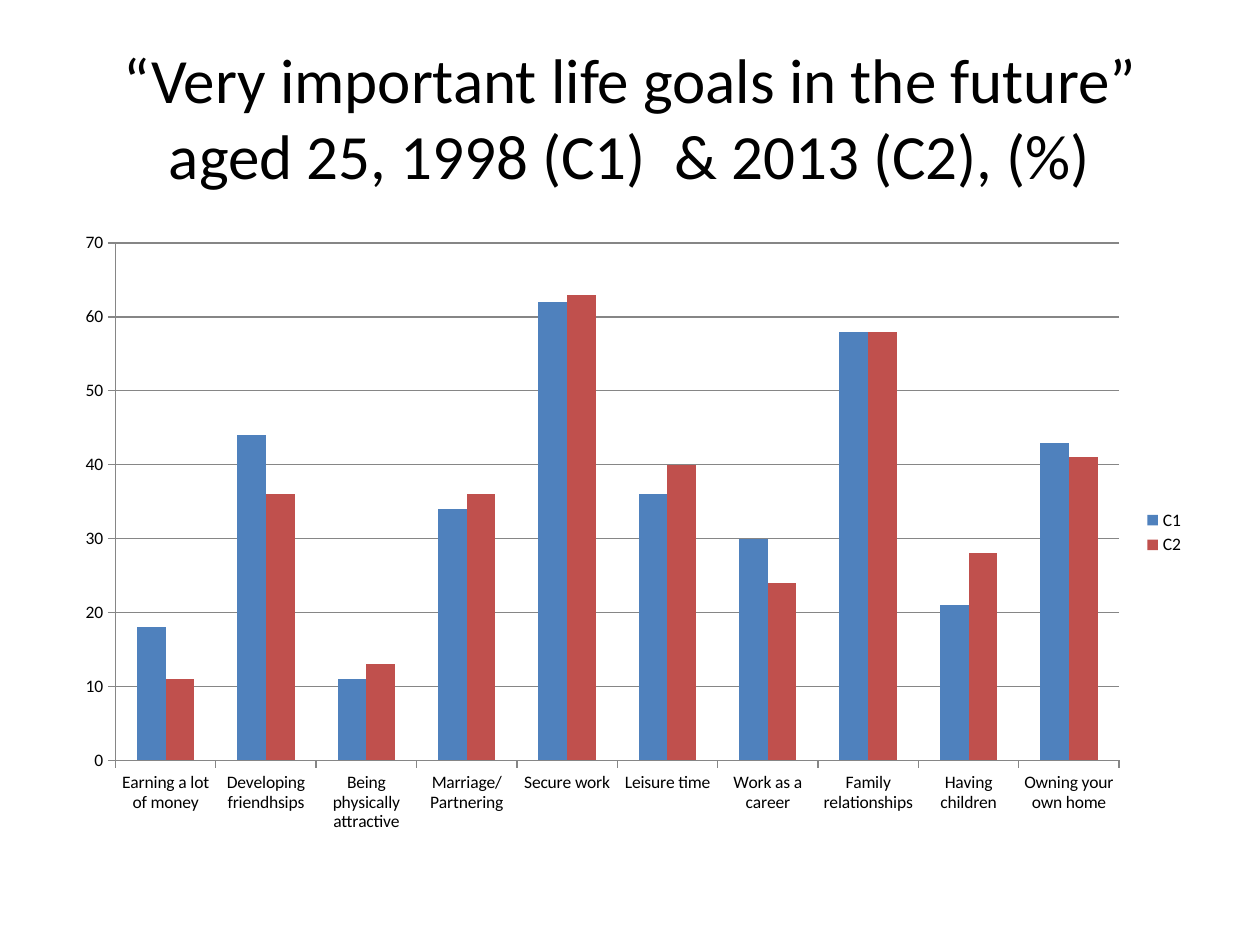
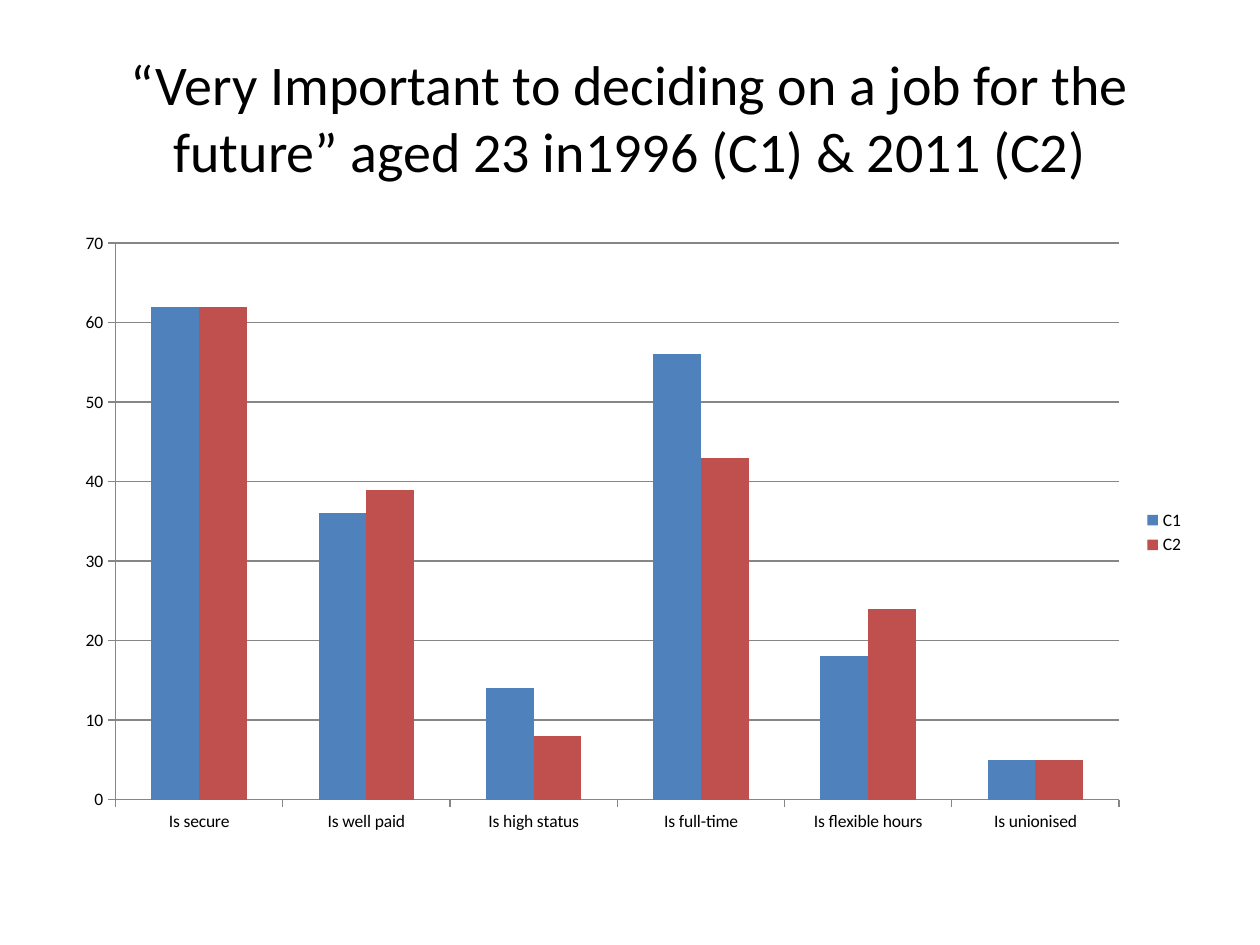
"""Build two slides that compare the goals of two cohorts in column charts."""
from pptx import Presentation
from pptx.chart.data import CategoryChartData as Data
from pptx.dml.color import RGBColor
from pptx.enum.chart import XL_CHART_TYPE as Kind, XL_LEGEND_POSITION as Side, XL_TICK_MARK as Tick
from pptx.enum.text import MSO_ANCHOR as Anchor, MSO_AUTO_SIZE as Fit, PP_ALIGN as Align
from pptx.util import Cm, Pt

BLACK = RGBColor(0x00, 0x00, 0x00)
GREY = RGBColor(0x86, 0x86, 0x86)
BLUE = RGBColor(0x4F, 0x81, 0xBD)
RED = RGBColor(0xC0, 0x50, 0x4D)
WHITE = RGBColor(0xFF, 0xFF, 0xFF)

GOALS = [
    ("Earning a lot of money", 18, 11),
    ("Developing friendhsips", 44, 36),
    ("Being physically attractive", 11, 13),
    ("Marriage/Partnering", 34, 36),
    ("Secure work", 62, 63),
    ("Leisure time", 36, 40),
    ("Work as a career", 30, 24),
    ("Family relationships", 58, 58),
    ("Having children", 21, 28),
    ("Owning your own home", 43, 41),
]
JOBS = [
    ("Is secure", 62, 62),
    ("Is well paid", 36, 39),
    ("Is high status", 14, 8),
    ("Is full-time", 56, 43),
    ("Is flexible hours", 18, 24),
    ("Is unionised", 5, 5),
]


def style(font, size, color=BLACK, name="Calibri"):
    font.size, font.name, font.color.rgb = Pt(size), name, color


def write(frame, text, size, align=Align.CENTER, **look):
    frame.text = text
    frame.word_wrap = True
    frame.auto_size = Fit.NONE
    frame.vertical_anchor = Anchor.MIDDLE
    for para in frame.paragraphs:
        para.alignment = align
        for run in para.runs:
            style(run.font, size, **look)


class Deck:
    left, width = Cm(1.27), Cm(22.86)
    names = ("C1", "C2")
    fills = (BLUE, RED)

    def __init__(self):
        self.prs = Presentation()
        self.prs.slide_width, self.prs.slide_height = Cm(25.4), Cm(19.05)
        self.slide = None

    def page(self, text, size):
        self.slide = self.prs.slides.add_slide(self.prs.slide_layouts[5])
        back = self.slide.background.fill
        back.solid()
        back.fore_color.rgb = WHITE
        title = self.slide.shapes.title
        title.left, title.top = self.left, Cm(0.76)
        title.width, title.height = self.width, Cm(3.18)
        write(title.text_frame, text, size)

    def chart(self, rows):
        labels, *cols = zip(*rows)
        data = Data()
        data.categories = labels
        for name, vals in zip(self.names, cols):
            data.add_series(name, vals)
        chart = self.slide.shapes.add_chart(
            Kind.COLUMN_CLUSTERED, self.left, Cm(4.45), self.width, Cm(12.57), data).chart
        style(chart.font, 10)
        chart.has_title = False
        chart.has_legend = True
        chart.legend.position = Side.RIGHT
        chart.legend.include_in_layout = False
        plot = chart.plots[0]
        plot.gap_width, plot.overlap = 150, 0
        plot.vary_by_categories = False
        for series, color in zip(plot.series, self.fills):
            series.format.fill.solid()
            series.format.fill.fore_color.rgb = color
        self.axes(chart)

    def axes(self, chart):
        value = chart.value_axis
        value.minimum_scale, value.maximum_scale, value.major_unit = 0, 70, 10
        value.has_major_gridlines = True
        lines = [value.major_gridlines.format.line]
        for axis in (chart.category_axis, value):
            axis.major_tick_mark = Tick.OUTSIDE
            axis.minor_tick_mark = Tick.NONE
            lines.append(axis.format.line)
        for line in lines:
            line.color.rgb = GREY
            line.width = Pt(0.75)


def main():
    deck = Deck()
    deck.page("“Very important life goals in the future” aged 25, 1998 (C1)  & 2013 (C2), (%)", 36)
    deck.chart(GOALS)
    deck.page("“Very Important to deciding on a job for the future” aged 23 in1996 (C1) & 2011 (C2)", 32)
    deck.chart(JOBS)
    deck.prs.save("out.pptx")


if __name__ == "__main__":
    main()
